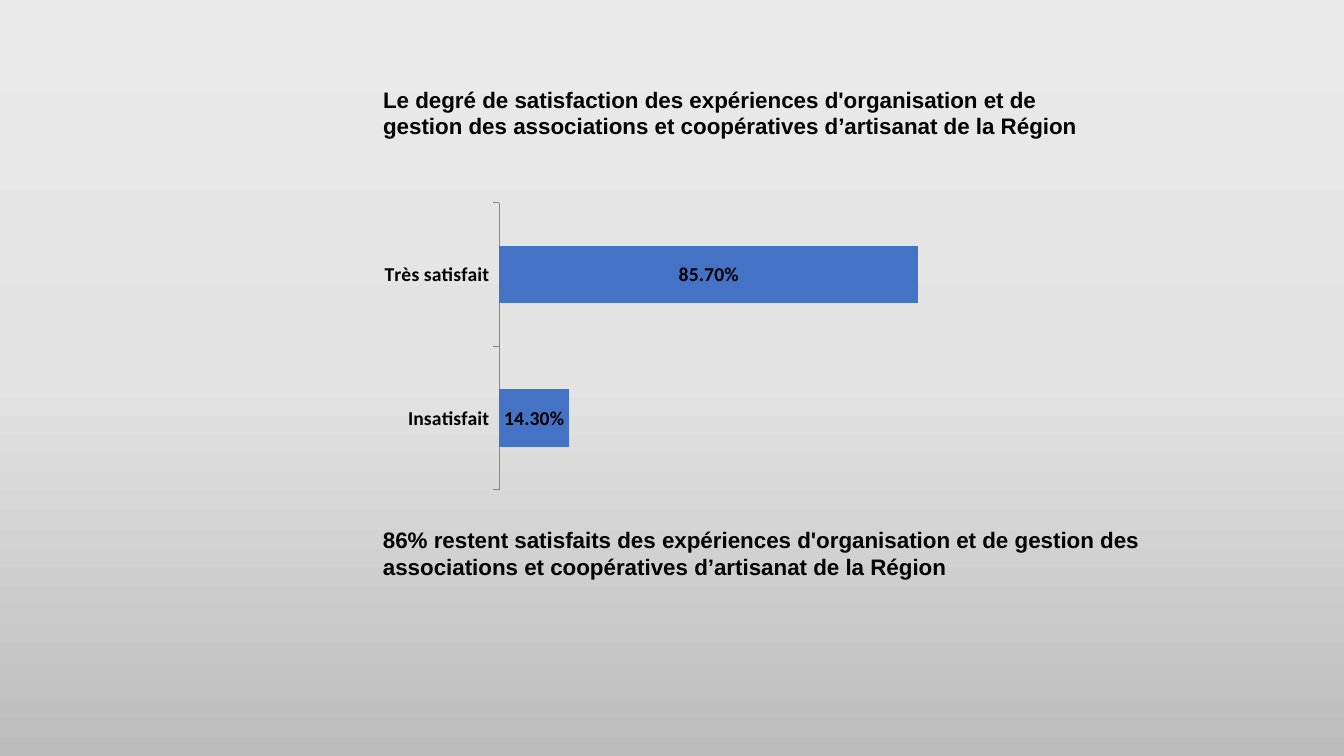
from dataclasses import dataclass

from lxml import etree
from pptx import Presentation
from pptx.chart.data import CategoryChartData
from pptx.dml.color import RGBColor
from pptx.enum.chart import XL_CHART_TYPE, XL_LABEL_POSITION, XL_TICK_MARK
from pptx.enum.text import MSO_ANCHOR, MSO_AUTO_SIZE, PP_ALIGN
from pptx.oxml.ns import qn
from pptx.util import Pt

BAR_STACKED = XL_CHART_TYPE.BAR_STACKED
LABEL_CENTER = XL_LABEL_POSITION.CENTER
TICK_OUTSIDE, TICK_NONE = XL_TICK_MARK.OUTSIDE, XL_TICK_MARK.NONE
MIDDLE, LEFT, NO_AUTOFIT = MSO_ANCHOR.MIDDLE, PP_ALIGN.LEFT, MSO_AUTO_SIZE.NONE

# Content
TITLE = ("Le degré de satisfaction des expériences d'organisation et de gestion "
         "des associations et coopératives d’artisanat de la Région")
CONCLUSION = ("86% restent satisfaits des expériences d'organisation et de gestion "
              "des associations et coopératives d’artisanat de la Région")
SATISFACTION = {"Insatisfait": 0.143, "Très satisfait": 0.857}

# Places in px: left, top, width, height
SLIDE_SIZE = (1344, 756)
LEFT_EDGE = 373
TITLE_BOX = (LEFT_EDGE, 80, 754, 65)
CHART_BOX = (LEFT_EDGE, 197, 578, 299)
CONCLUSION_BOX = (LEFT_EDGE, 521, 846, 65)
EMU_PER_PX = 12192000 / 1344


@dataclass(frozen=True)
class Theme:
    text: RGBColor = RGBColor(0, 0, 0)
    bar: RGBColor = RGBColor(0x44, 0x72, 0xC4)
    axis: RGBColor = RGBColor(0x86, 0x86, 0x86)
    background: tuple = ((0, "EBEAEA"), (50, "E4E3E3"), (100, "BDBCBC"))
    text_font: str = "Arial"
    chart_font: str = "Calibri"
    text_size: int = 16
    chart_size: int = 14


THEME = Theme()


def emu(lengths):
    return [round(length * EMU_PER_PX) for length in lengths]


def set_attributes(target, values):
    for name, value in values.items():
        setattr(target, name, value)


def format_font(font, name, size):
    set_attributes(font, {"name": name, "size": Pt(size), "bold": True})
    font.color.rgb = THEME.text


def set_background(slide):
    fill = slide.background.fill
    fill.gradient()
    gradient = slide.background._cSld.find(".//" + qn("a:gradFill"))
    for child in list(gradient):
        gradient.remove(child)
    stops = etree.SubElement(gradient, qn("a:gsLst"))
    for percent, color in THEME.background:
        stop = etree.SubElement(stops, qn("a:gs"), pos=str(percent * 1000))
        etree.SubElement(stop, qn("a:srgbClr"), val=color)
    etree.SubElement(gradient, qn("a:lin"), ang="5400000", scaled="0")


def write_text(shape, box, text):
    set_attributes(shape, dict(zip(("left", "top", "width", "height"), emu(box))))
    frame = shape.text_frame
    frame.text = text
    set_attributes(frame, {"word_wrap": True, "auto_size": NO_AUTOFIT,
                           "vertical_anchor": MIDDLE})
    paragraph = frame.paragraphs[0]
    paragraph.alignment = LEFT
    format_font(paragraph.font, THEME.text_font, THEME.text_size)


def add_satisfaction_chart(slide):
    data = CategoryChartData(number_format="0.00%")
    data.categories = list(SATISFACTION)
    data.add_series("Series 1", list(SATISFACTION.values()))
    chart = slide.shapes.add_chart(BAR_STACKED, *emu(CHART_BOX), data).chart
    set_attributes(chart, {"has_legend": False, "has_title": False})
    format_font(chart.font, THEME.chart_font, THEME.chart_size)

    # Bars and their labels
    plot = chart.plots[0]
    set_attributes(plot, {"gap_width": 150, "overlap": 100,
                          "vary_by_categories": False, "has_data_labels": True})
    set_attributes(plot.data_labels, {
        "show_value": True, "number_format": "0.00%",
        "number_format_is_linked": False, "position": LABEL_CENTER})
    format_font(plot.data_labels.font, THEME.chart_font, THEME.chart_size)
    bar_fill = plot.series[0].format.fill
    bar_fill.solid()
    bar_fill.fore_color.rgb = THEME.bar

    # Axes
    set_attributes(chart.value_axis, {
        "visible": False, "has_major_gridlines": False,
        "minimum_scale": 0, "maximum_scale": 0.9})
    set_attributes(chart.category_axis, {
        "major_tick_mark": TICK_OUTSIDE, "minor_tick_mark": TICK_NONE,
        "has_major_gridlines": False})
    axis_line = chart.category_axis.format.line
    axis_line.color.rgb = THEME.axis
    axis_line.width = Pt(0.75)


def main():
    presentation = Presentation()
    presentation.slide_width, presentation.slide_height = emu(SLIDE_SIZE)
    title_only = presentation.slide_layouts[5]
    slide = presentation.slides.add_slide(title_only)
    set_background(slide)
    write_text(slide.shapes.title, TITLE_BOX, TITLE)
    add_satisfaction_chart(slide)
    conclusion = slide.shapes.add_textbox(*emu(CONCLUSION_BOX))
    write_text(conclusion, CONCLUSION_BOX, CONCLUSION)
    presentation.save("out.pptx")


if __name__ == "__main__":
    main()
